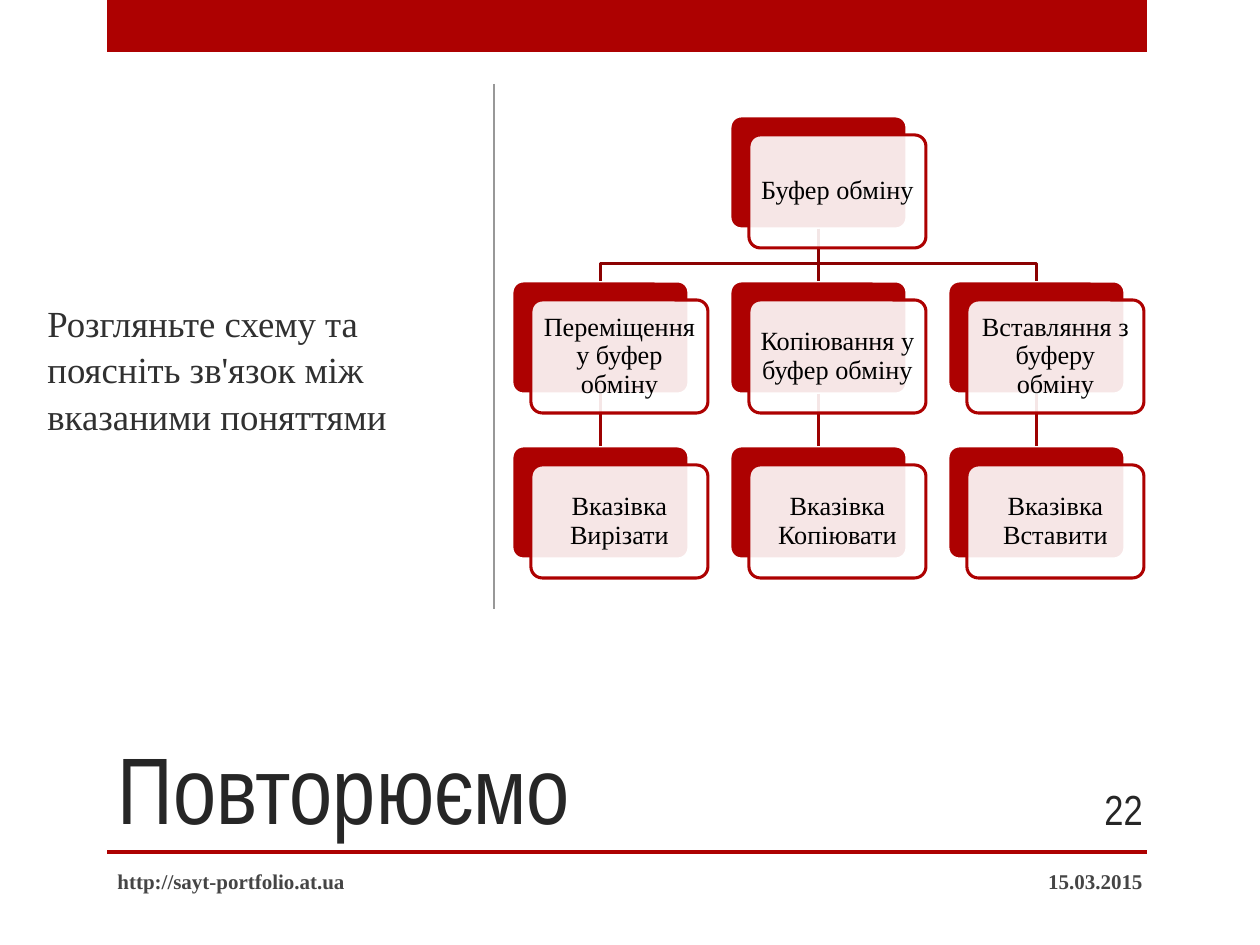
from dataclasses import dataclass

from lxml import etree
from pptx import Presentation
from pptx import util as u
from pptx.dml.color import RGBColor
from pptx.enum import shapes, text
from pptx.oxml.ns import qn

PX = u.Inches(1) / 126
NODE_W, NODE_H = 177, 113
NODE_LEFT, NODE_TOP = 512, 116
COLUMN_STEP, ROW_STEP = 218, 165
FRONT_SHIFT = 19
BEND_Y = 264
BRANCHES = [
    ("Переміщення у буфер обміну", "Вказівка Вирізати"),
    ("Копіювання у буфер обміну", "Вказівка Копіювати"),
    ("Вставляння з буферу обміну", "Вказівка Вставити"),
]


@dataclass(frozen=True)
class Theme:
    """Colours, fonts and type sizes of the slide."""
    red: str = "AD0101"
    upper_link: str = "8B0101"
    lower_link: str = "9D0101"
    white: str = "FFFFFF"
    black: str = "000000"
    rule: str = "989898"
    heading: str = "262626"
    body: str = "303030"
    footer: str = "454545"
    narrow: str = "Arial Narrow"
    serif: str = "Times New Roman"
    title_size: int = 54
    number_size: int = 24
    body_size: int = 21
    node_size: int = 15
    footer_size: int = 12
    line: float = 1.75
    rule_line: float = 1.25


THEME = Theme()


def px(value):
    """Turn pixels into EMU."""
    return u.Emu(round(value * PX))


def rgb(code):
    """Turn a hex code into a colour."""
    return RGBColor.from_string(code)


def set_line(item, color, width=THEME.line):
    """Give a shape or connector a solid line."""
    item.line.color.rgb = rgb(color)
    item.line.width = u.Pt(width)


def write(frame, words, font, size, color, align=text.PP_ALIGN.LEFT,
          anchor=text.MSO_ANCHOR.MIDDLE, bold=False, spacing=None):
    """Fill a text frame with one formatted paragraph."""
    frame.word_wrap = True
    frame.vertical_anchor = anchor
    frame.text = words
    para = frame.paragraphs[0]
    para.alignment = align
    para.line_spacing = spacing
    span = para.runs[0]
    span.font.name = font
    span.font.size = u.Pt(size)
    span.font.bold = bold
    span.font.color.rgb = rgb(color)


def add_text(page, area, words, font, size, color, **options):
    """Add a text box."""
    box = page.shapes.add_textbox(*map(px, area))
    write(box.text_frame, words, font, size, color, **options)


def add_block(page, kind, area, fill):
    """Add a filled shape without outline or shadow."""
    block = page.shapes.add_shape(kind, *map(px, area))
    block.shadow.inherit = False
    block.fill.solid()
    block.fill.fore_color.rgb = rgb(fill)
    block.line.fill.background()
    return block


def add_card(page, column, row, shift, fill, outline):
    """Add one rounded card at a place in the scheme grid."""
    left = NODE_LEFT + column * COLUMN_STEP + shift
    top = NODE_TOP + row * ROW_STEP + shift
    card = add_block(page, shapes.MSO_SHAPE.ROUNDED_RECTANGLE,
                     (left, top, NODE_W, NODE_H), fill)
    card.adjustments[0] = 0.1
    set_line(card, outline)
    return card


def add_label(page, column, row, words):
    """Add the translucent front card with its wording."""
    card = add_card(page, column, row, FRONT_SHIFT, THEME.white, THEME.red)
    color = card.fill._xPr.find(qn("a:solidFill"))[0]
    etree.SubElement(color, qn("a:alpha")).set("val", "90000")
    frame = card.text_frame
    frame.margin_left = frame.margin_right = px(7)
    frame.margin_top = frame.margin_bottom = px(7)
    write(frame, words, THEME.serif, THEME.node_size, THEME.black,
          align=text.PP_ALIGN.CENTER, spacing=0.9)


def add_straight(page, start, end, color, width=THEME.line):
    """Add a straight connector between two points."""
    link = page.shapes.add_connector(
        shapes.MSO_CONNECTOR.STRAIGHT, *map(px, start + end))
    set_line(link, color, width)
    etree.SubElement(link._element.spPr, qn("a:effectLst"))
    return link


def join(page, parent, child, color):
    """Join the bottom of one card to the top of the card below."""
    link = add_straight(page, (0, 0), (0, 0), color)
    link.begin_connect(parent, 2)
    link.end_connect(child, 0)


def add_elbow(page, parent, child):
    """Add a bent line from the root card to a side card."""
    start_x = parent.left + parent.width // 2
    end_x = child.left + child.width // 2
    builder = page.shapes.build_freeform(start_x, parent.top + parent.height)
    builder.add_line_segments(
        [(start_x, px(BEND_Y)), (end_x, px(BEND_Y)), (end_x, child.top)],
        close=False)
    elbow = builder.convert_to_shape()
    elbow.shadow.inherit = False
    elbow.fill.background()
    set_line(elbow, THEME.upper_link)


def add_scheme(page):
    """Draw the clipboard scheme: back cards, links, then labels."""
    nodes = {(1, 0): "Буфер обміну"}
    for column, branch in enumerate(BRANCHES):
        for row, words in enumerate(branch, start=1):
            nodes[column, row] = words
    cards = {place: add_card(page, *place, 0, THEME.red, THEME.white)
             for place in nodes}
    root = cards[1, 0]
    for column in range(len(BRANCHES)):
        join(page, cards[column, 1], cards[column, 2], THEME.lower_link)
        if column != 1:
            add_elbow(page, root, cards[column, 1])
    join(page, root, cards[1, 1], THEME.upper_link)
    for place, words in nodes.items():
        add_label(page, *place, words)


def add_frame(page):
    """Draw the bands and the vertical rule."""
    for top, height in ((0, 52), (850, 4)):
        add_block(page, shapes.MSO_SHAPE.RECTANGLE,
                  (107, top, 1040, height), THEME.red)
    add_straight(page, (494, 84), (494, 609), THEME.rule, THEME.rule_line)


def add_wording(page):
    """Add the title, task, footer and slide number."""
    right = text.PP_ALIGN.RIGHT
    add_text(page, (105, 630, 935, 220), "Повторюємо", THEME.narrow,
             THEME.title_size, THEME.heading, anchor=text.MSO_ANCHOR.BOTTOM)
    add_text(page, (35, 244, 418, 248),
             "Розгляньте схему та поясніть зв'язок між вказаними поняттями",
             THEME.serif, THEME.body_size, THEME.body, spacing=1.05)
    add_text(page, (861, 856, 294, 50), "15.03.2015", THEME.serif,
             THEME.footer_size, THEME.footer, align=right, bold=True)
    add_text(page, (105, 856, 672, 50), "http://sayt-portfolio.at.ua",
             THEME.serif, THEME.footer_size, THEME.footer, bold=True)
    add_text(page, (1050, 784, 105, 50), "22", THEME.narrow,
             THEME.number_size, THEME.heading, align=right)


def main():
    """Build and save the slide."""
    deck = Presentation()
    deck.slide_width, deck.slide_height = px(1260), px(945)
    page = deck.slides.add_slide(deck.slide_layouts[6])
    add_frame(page)
    add_scheme(page)
    add_wording(page)
    deck.save("out.pptx")


if __name__ == "__main__":
    main()
